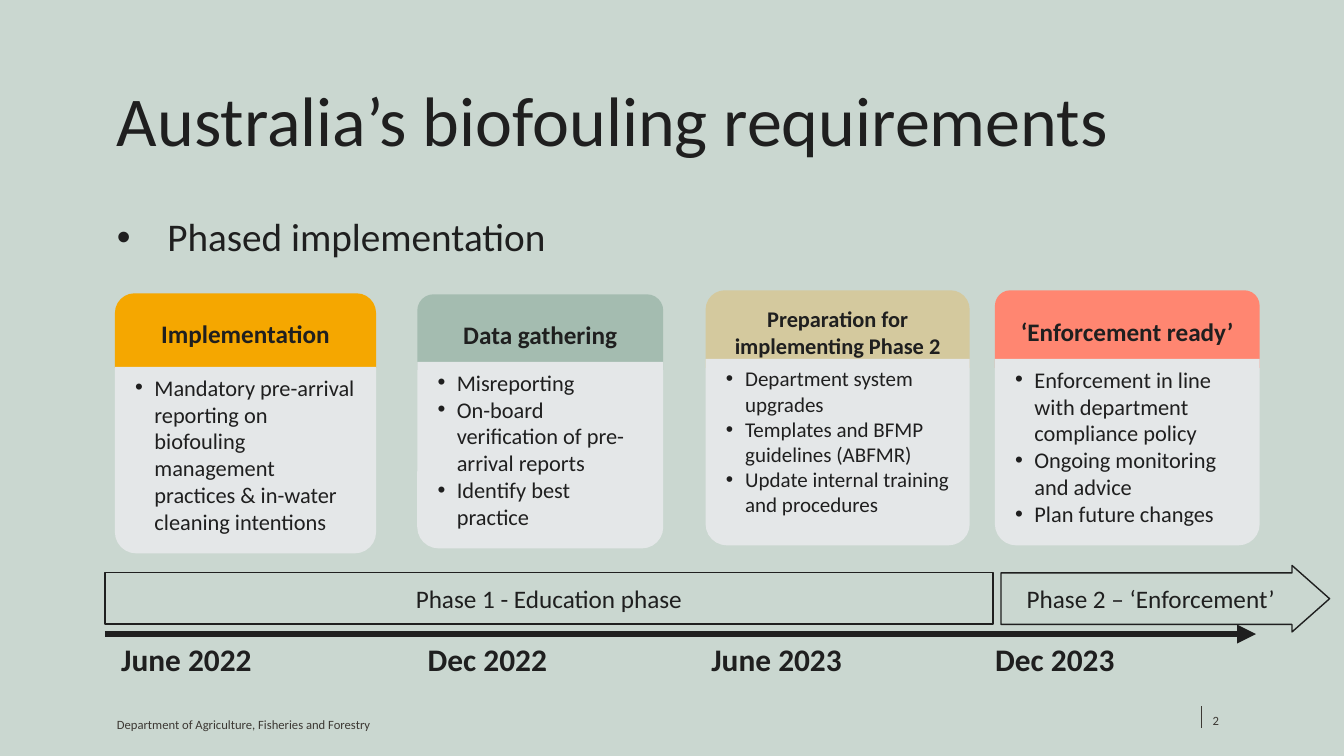
"""Build the slide on the phased introduction of Australia's biofouling requirements."""
from dataclasses import dataclass

from lxml import etree
from pptx import Presentation, util as u
from pptx.dml.color import RGBColor
from pptx.enum import shapes, text
from pptx.oxml.ns import qn

COLOURS = {
    "page": "CAD7D0", "ink": "1F1F1F", "footer": "3C3833", "panel": "E4E7E8",
    "amber": "F5A700", "sage": "A4BCB0", "sand": "D4C99E", "coral": "FF8671",
}
WIDTH, HEIGHT = u.Inches(13.33), u.Inches(7.5)
FONT = "Calibri"
CARD_INSET = (1.05, 0.93)
PANEL_HEIGHT = 24.67
DATE_TOP, DATE_HEIGHT = 83.87, 5.6
TIMELINE_LEFT = 7.8


@dataclass
class Area:
    """A rectangle in percent of the slide's width and height."""
    left: float
    top: float
    width: float
    height: float

    def lengths(self) -> tuple[int, int, int, int]:
        """Give left, top, width and height as slide lengths."""
        return across(self.left), down(self.top), across(self.width), down(self.height)


@dataclass
class Stage:
    """A card with a coloured heading, and its date on the timeline."""
    heading: str
    colour: str
    header: Area
    corner: float
    panel_top: float
    points: list[str]
    date: str
    date_left: float
    date_width: float
    heading_size: float = 18
    point_size: float = 16


STAGES = [
    Stage("Implementation", "amber", Area(8.55, 38.8, 19.43, 9.87), 0.263, 48.53,
          ["Mandatory pre-arrival reporting on biofouling management practices "
           "& in-water cleaning intentions"], "June 2022", 7.28, 13.2),
    Stage("Data gathering", "sage", Area(31.05, 38.93, 18.3, 10), 0.215, 47.87,
          ["Misreporting", "On-board verification of pre-arrival reports",
           "Identify best practice"], "Dec 2022", 31.43, 9.68),
    Stage("Preparation for implementing Phase 2", "sand",
          Area(52.5, 38.4, 19.65, 10.27), 0.247, 47.47,
          ["Department system upgrades", "Templates and BFMP guidelines (ABFMR)",
           "Update internal training and procedures"], "June 2023", 52.8, 9.98, 16, 15),
    Stage("‘Enforcement ready’", "coral", Area(74.03, 38.4, 19.7, 10.27), 0.199, 47.47,
          ["Enforcement in line with department compliance policy",
           "Ongoing monitoring and advice", "Plan future changes"],
          "Dec 2023", 74.03, 8.93),
]


def across(share: float) -> int:
    """Turn a percentage of the slide's width into a length."""
    return round(WIDTH * share / 100)


def down(share: float) -> int:
    """Turn a percentage of the slide's height into a length."""
    return round(HEIGHT * share / 100)


def colour(name: str) -> RGBColor:
    """Look up a named colour."""
    return RGBColor.from_string(COLOURS[name])


def write(box, lines: list[str], *, size: float, ink: str = "ink", bold: bool = False,
          align=text.PP_ALIGN.LEFT, anchor=text.MSO_ANCHOR.TOP, spacing=None,
          inset: tuple[float, float] = (0.75, 0.67), wrap: bool = True,
          bullet_indent: float = 0) -> None:
    """Fill a shape with formatted paragraphs."""
    frame = box.text_frame
    frame.auto_size = text.MSO_AUTO_SIZE.NONE
    frame.word_wrap = wrap
    frame.vertical_anchor = anchor
    frame.margin_left = frame.margin_right = across(inset[0])
    frame.margin_top = frame.margin_bottom = down(inset[1])
    for number, line in enumerate(lines):
        para = frame.add_paragraph() if number else frame.paragraphs[0]
        span = para.add_run()
        span.text = line
        if bullet_indent:
            layout = para._p.get_or_add_pPr()
            layout.set("marL", str(across(bullet_indent)))
            layout.set("indent", str(-across(bullet_indent)))
            etree.SubElement(layout, qn("a:buFont"), typeface="Arial")
            etree.SubElement(layout, qn("a:buChar"), char="•")
        para.alignment = align
        para.line_spacing = spacing
        span.font.name = FONT
        span.font.size = u.Pt(size)
        span.font.bold = bold
        span.font.color.rgb = colour(ink)


def add_text(page, area: Area, line: str, **style) -> None:
    """Add a text box with one paragraph."""
    write(page.shapes.add_textbox(*area.lengths()), [line], **style)


def add_block(page, kind, area: Area, corners: tuple[float, ...], lines: list[str], *,
              fill: str | None = None, **style) -> None:
    """Add a filled shape, or an outlined one when no fill is given."""
    block = page.shapes.add_shape(kind, *area.lengths())
    block.shadow.inherit = False
    for number, corner in enumerate(corners):
        block.adjustments[number] = corner
    if fill:
        block.fill.solid()
        block.fill.fore_color.rgb = colour(fill)
        block.line.fill.background()
    else:
        block.fill.background()
        block.line.color.rgb = colour("ink")
        block.line.width = u.Pt(1)
    write(block, lines, **style)


def add_rule(page, start: tuple[float, float], end: tuple[float, float], ink: str,
             weight: float, arrow: bool = False) -> None:
    """Add a straight line, with an arrowhead at its end if wanted."""
    rule = page.shapes.add_connector(
        shapes.MSO_CONNECTOR.STRAIGHT,
        across(start[0]), down(start[1]), across(end[0]), down(end[1]))
    rule.line.color.rgb = colour(ink)
    rule.line.width = u.Pt(weight)
    properties = rule.element.spPr
    if arrow:
        etree.SubElement(properties.find(qn("a:ln")), qn("a:tailEnd"), type="triangle")
    etree.SubElement(properties, qn("a:effectLst"))


def add_stage(page, stage: Stage) -> None:
    """Draw one card and its date."""
    kind = shapes.MSO_SHAPE.ROUND_2_SAME_RECTANGLE
    header = stage.header
    add_block(page, kind, header, (stage.corner, 0), [stage.heading], fill=stage.colour,
              size=stage.heading_size, bold=True, align=text.PP_ALIGN.CENTER,
              anchor=text.MSO_ANCHOR.MIDDLE, inset=CARD_INSET)
    panel = Area(header.left, stage.panel_top, header.width, PANEL_HEIGHT)
    add_block(page, kind, panel, (0, 0.114), stage.points, fill="panel",
              size=stage.point_size, inset=CARD_INSET, bullet_indent=1.43)
    add_text(page, Area(stage.date_left, DATE_TOP, stage.date_width, DATE_HEIGHT),
             stage.date, size=22.4, bold=True, align=text.PP_ALIGN.CENTER,
             anchor=text.MSO_ANCHOR.MIDDLE, spacing=1.2, inset=(0, 0), wrap=False)


def main() -> None:
    """Build and save the deck."""
    deck = Presentation()
    deck.slide_width, deck.slide_height = WIDTH, HEIGHT
    page = deck.slides.add_slide(deck.slide_layouts[5])
    page.background.fill.solid()
    page.background.fill.fore_color.rgb = colour("page")

    title = page.shapes.title
    title.left, title.top, title.width, title.height = Area(
        7.95, 10.67, 84.15, 13.33).lengths()
    write(title, ["Australia’s biofouling requirements"], size=50, spacing=0.9)
    add_text(page, Area(7.95, 28.13, 65.85, 5.6), "Phased implementation",
             size=28, spacing=0.9, bullet_indent=3.75)

    for stage in STAGES:
        add_stage(page, stage)

    phase = dict(size=18, align=text.PP_ALIGN.CENTER, anchor=text.MSO_ANCHOR.MIDDLE)
    add_block(page, shapes.MSO_SHAPE.ROUNDED_RECTANGLE,
              Area(TIMELINE_LEFT, 75.73, 66.08, 6.8), (0,),
              ["Phase 1 - Education phase"], **phase)
    add_block(page, shapes.MSO_SHAPE.RIGHT_ARROW, Area(74.48, 74.8, 24.45, 8.8),
              (0.775, 0.565), ["Phase 2 – ‘Enforcement’"], **phase)
    add_rule(page, (TIMELINE_LEFT, 83.87), (93.45, 83.87), "ink", 4.5, arrow=True)

    footer = dict(size=9, ink="footer", spacing=u.Pt(10), inset=(0, 0),
                  anchor=text.MSO_ANCHOR.BOTTOM)
    add_text(page, Area(8.7, 93.07, 26.93, 3.7),
             "Department of Agriculture, Fisheries and Forestry", **footer)
    add_text(page, Area(90.23, 93.07, 4.95, 3.2), "2", **footer)
    add_rule(page, (89.4, 96.27), (89.4, 93.33), "footer", 0.5)
    deck.save("out.pptx")


if __name__ == "__main__":
    main()
